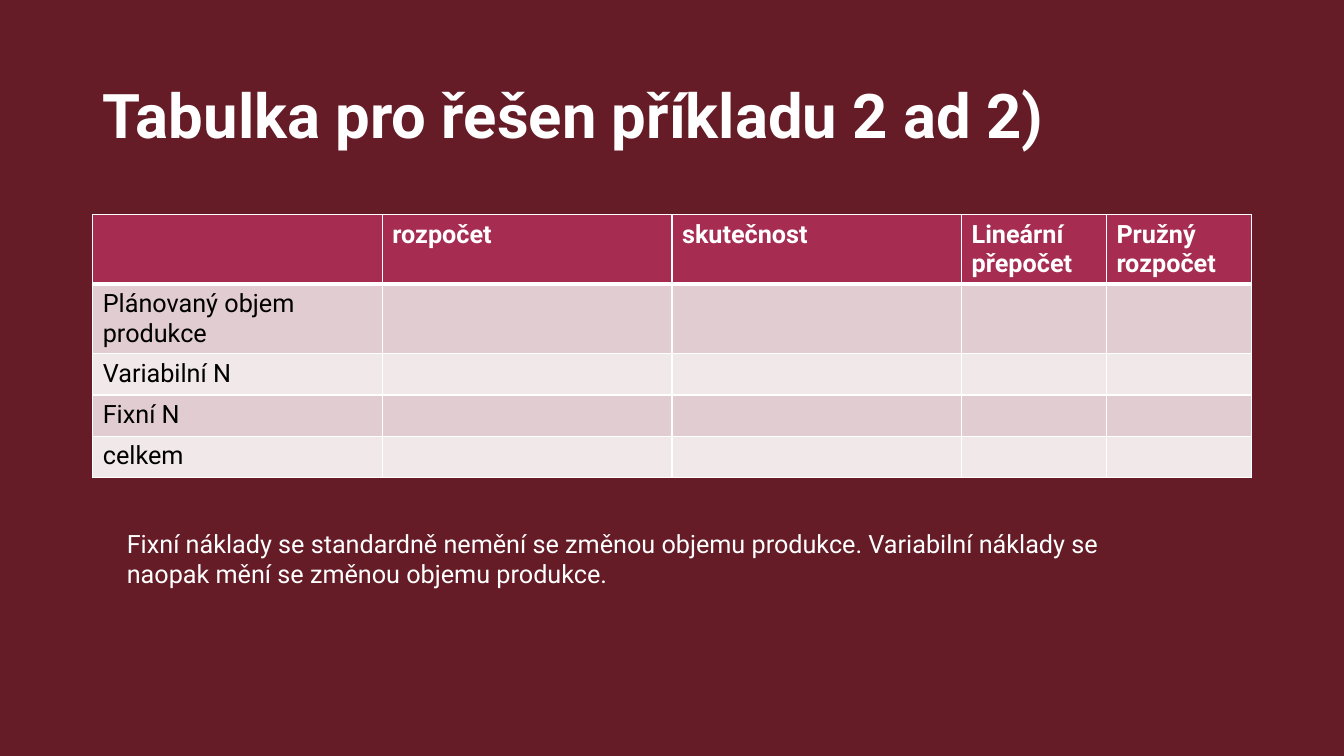
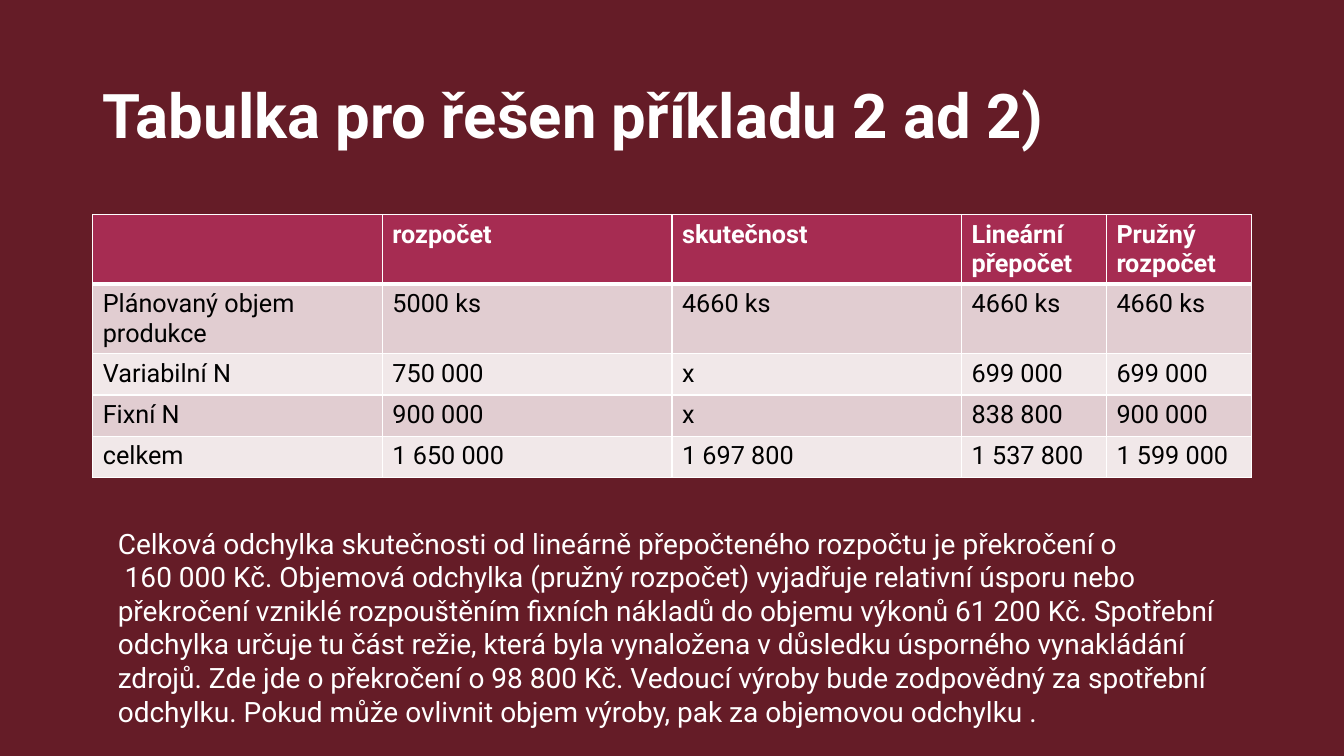
"""Build two slides with the budget table for example 2."""
import pptx
import pptx.util
import pptx.dml.color
import pptx.enum.text
import pptx.oxml
import pptx.oxml.ns

COLOURS = {
    "background": "651C27",
    "header": "A62C52",
    "band_dark": "E1CDD1",
    "band_light": "F1E8E9",
    "light": "FFFFFF",
    "dark": "000000",
}
FONT = "Roboto"
WIDTH, HEIGHT = 13.33, 7.5
MARGIN = 0.92
TITLE_BOX = (MARGIN, 0.4, 11.5, 1.45)
TITLE = "Tabulka pro řešen příkladu 2 ad 2)"
TABLE_TOP, TABLE_WIDTH = 2.13, 11.49
COLUMN_SHARES = [2, 2, 2, 1, 1]
ROW_HEIGHTS = [0.69, 0.69, 0.41, 0.41, 0.41]
HEADINGS = ["", "rozpočet", "skutečnost", "Lineární přepočet", "Pružný rozpočet"]
LABELS = ["Plánovaný objem produkce", "Variabilní N", "Fixní N", "celkem"]

SLIDES = [
    {
        "values": [[""] * 4] * 4,
        "note": [
            "Fixní náklady se standardně nemění se změnou objemu produkce. "
            "Variabilní náklady se naopak mění se změnou objemu produkce.",
        ],
        "note_box": (1.16, 5.19, 10.46, 0.71),
        "note_size": 18,
    },
    {
        "values": [
            ["5000 ks", "4660 ks", "4660 ks", "4660 ks"],
            ["750 000", "x", "699 000", "699 000"],
            ["900 000", "x", "838 800", "900 000"],
            ["1 650 000", "1 697 800", "1 537 800", "1 599 000"],
        ],
        "note": [
            "Celková odchylka skutečnosti od lineárně přepočteného rozpočtu je překročení o",
            " 160 000 Kč. Objemová odchylka (pružný rozpočet) vyjadřuje relativní úsporu "
            "nebo překročení vzniklé rozpouštěním fixních nákladů do objemu výkonů "
            "61 200 Kč. Spotřební odchylka určuje tu část režie, která byla vynaložena "
            "v důsledku úsporného vynakládání zdrojů. Zde jde o překročení o 98 800 Kč. "
            "Vedoucí výroby bude zodpovědný za spotřební odchylku. Pokud může ovlivnit "
            "objem výroby, pak za objemovou odchylku .",
        ],
        "note_box": (1.07, 5.17, 11.5, 2.12),
        "note_size": 20,
    },
]


def colour(name):
    return pptx.dml.color.RGBColor.from_string(COLOURS[name])


def inches(lengths):
    return [pptx.util.Inches(length) for length in lengths]


def paint(fill, name):
    fill.solid()
    fill.fore_color.rgb = colour(name)


def write(paragraph, text, size, colour_name, bold=False):
    run = paragraph.add_run()
    run.text = text
    run.font.name = FONT
    run.font.size = pptx.util.Pt(size)
    run.font.bold = bold
    run.font.color.rgb = colour(colour_name)


def set_borders(cell, row):
    widths = {"L": 1, "R": 1, "T": 3 if row == 1 else 1, "B": 3 if row == 0 else 1}
    for side, width in widths.items():
        cell._tc.get_or_add_tcPr().append(pptx.oxml.parse_xml(
            f'<a:ln{side} {pptx.oxml.ns.nsdecls("a")} w="{pptx.util.Pt(width)}">'
            f'<a:solidFill><a:srgbClr val="{COLOURS["light"]}"/></a:solidFill></a:ln{side}>'
        ))


def add_title(slide):
    frame = slide.shapes.title.text_frame
    frame.word_wrap = True
    frame.auto_size = pptx.enum.text.MSO_AUTO_SIZE.NONE
    frame.vertical_anchor = pptx.enum.text.MSO_ANCHOR.MIDDLE
    paragraph = frame.paragraphs[0]
    paragraph.alignment = pptx.enum.text.PP_ALIGN.LEFT
    write(paragraph, TITLE, 44, "light", bold=True)


def add_budget_table(slide, values):
    rows = [HEADINGS] + [[label, *line] for label, line in zip(LABELS, values)]
    box = inches((MARGIN, TABLE_TOP, TABLE_WIDTH, sum(ROW_HEIGHTS)))
    table = slide.shapes.add_table(len(rows), len(HEADINGS), *box).table
    for column, share in zip(table.columns, COLUMN_SHARES):
        column.width = pptx.util.Inches(TABLE_WIDTH * share / sum(COLUMN_SHARES))
    for row, (texts, height) in enumerate(zip(rows, ROW_HEIGHTS)):
        table.rows[row].height = pptx.util.Inches(height)
        is_header = row == 0
        fill = "header" if is_header else "band_dark" if row % 2 else "band_light"
        for column, text in enumerate(texts):
            cell = table.cell(row, column)
            set_borders(cell, row)
            paint(cell.fill, fill)
            if text:
                write(cell.text_frame.paragraphs[0], text, 18,
                      "light" if is_header else "dark", bold=is_header)


def add_note(slide, paragraphs, box, size):
    frame = slide.shapes.add_textbox(*inches(box)).text_frame
    frame.word_wrap = True
    for index, text in enumerate(paragraphs):
        paragraph = frame.add_paragraph() if index else frame.paragraphs[0]
        write(paragraph, text, size, "light")


def main():
    presentation = pptx.Presentation()
    presentation.slide_width, presentation.slide_height = inches((WIDTH, HEIGHT))
    paint(presentation.slide_master.background.fill, "background")
    layout = presentation.slide_layouts.get_by_name("Title Only")
    title = layout.placeholders[0]
    title.left, title.top, title.width, title.height = inches(TITLE_BOX)
    for content in SLIDES:
        slide = presentation.slides.add_slide(layout)
        add_title(slide)
        add_budget_table(slide, content["values"])
        add_note(slide, content["note"], content["note_box"], content["note_size"])
    presentation.save("out.pptx")


if __name__ == "__main__":
    main()
